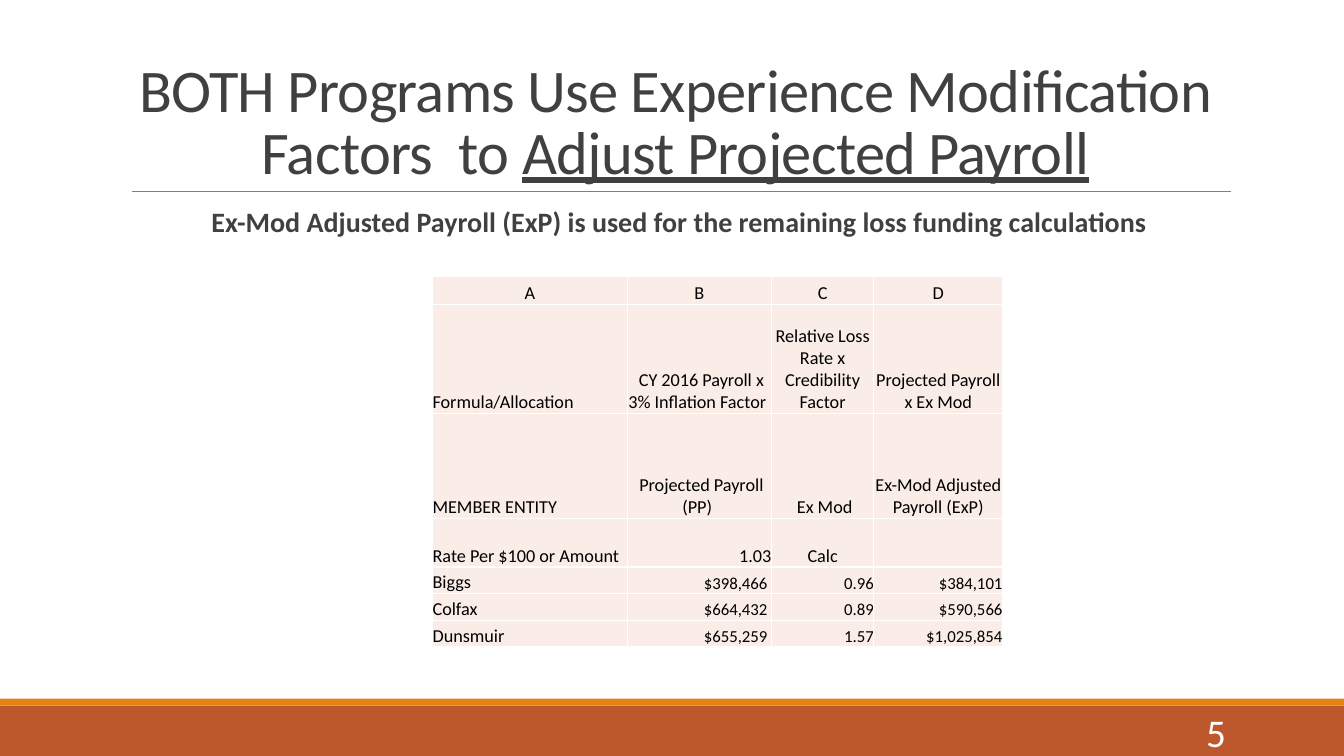
import dataclasses

import lxml.etree
import pptx
import pptx.dml.color
import pptx.enum.shapes
import pptx.enum.text
import pptx.oxml.ns
import pptx.util

Pt = pptx.util.Pt
Align = pptx.enum.text.PP_ALIGN
Anchor = pptx.enum.text.MSO_ANCHOR
qn = pptx.oxml.ns.qn


@dataclasses.dataclass(frozen=True)
class Theme:
    font: str = "Calibri"
    white: str = "FFFFFF"
    black: str = "000000"
    dark: str = "404040"
    gray: str = "808080"
    rust: str = "BD582C"
    orange: str = "E48312"
    blush: str = "FAEDE7"
    title: float = 43.2
    number: float = 28
    body: float = 20
    label: float = 13
    money: float = 12


def rgb(code):
    return pptx.dml.color.RGBColor.from_string(code)


def node(parent, tag, **attrs):
    return lxml.etree.SubElement(parent, qn(tag), **attrs)


class Page:
    def __init__(self, slide, theme):
        self.shapes = slide.shapes
        self.theme = theme

    def style(self, para, size, color, align, bold=False):
        para.alignment = align
        for run in para.runs:
            run.font.name = self.theme.font
            run.font.size = Pt(size)
            run.font.bold = bold
            run.font.color.rgb = rgb(color)

    def band(self, top, height, color):
        bar = self.shapes.add_shape(
            pptx.enum.shapes.MSO_SHAPE.RECTANGLE, 0, Pt(top), Pt(960), Pt(height))
        bar.shadow.inherit = False
        bar.fill.solid()
        bar.fill.fore_color.rgb = rgb(color)
        bar.line.fill.background()

    def rule(self, left, right, top):
        line = self.shapes.add_connector(
            pptx.enum.shapes.MSO_CONNECTOR.STRAIGHT, Pt(left), Pt(top), Pt(right), Pt(top))
        line.line.color.rgb = rgb(self.theme.gray)
        line.line.width = Pt(0.5)
        node(line._element.spPr, "a:effectLst")

    def text(self, box, words, size, color, align, anchor, bold=False):
        frame = self.shapes.add_textbox(*map(Pt, box)).text_frame
        frame.word_wrap = True
        frame.vertical_anchor = anchor
        frame.text = words
        self.style(frame.paragraphs[0], size, color, align, bold)
        return frame

    def title(self, box, plain, marked):
        look = self.theme
        frame = self.text(box, plain, look.title, look.dark, Align.CENTER, Anchor.BOTTOM)
        para = frame.paragraphs[0]
        para.line_spacing = 0.85
        run = para.add_run()
        run.text = marked
        self.style(para, look.title, look.dark, Align.CENTER)
        run.font.underline = True
        for part in para.runs:
            part.font._element.set("spc", "-50")

    def body(self, box, words):
        look = self.theme
        frame = self.text(box, words, look.body, look.dark, Align.CENTER, Anchor.TOP, True)
        frame.margin_left = frame.margin_right = 0
        para = frame.paragraphs[0]
        para.line_spacing = 0.9
        para.space_before = Pt(12)
        para.space_after = Pt(2)
        props = para._p.get_or_add_pPr()
        props.set("marL", str(Pt(7.2)))
        props.set("indent", str(Pt(-7.2)))
        node(node(props, "a:buClr"), "a:srgbClr", val=look.orange)
        node(props, "a:buChar", char=" ")

    def border(self, cell):
        props = cell._tc.get_or_add_tcPr()
        for side in ("a:lnL", "a:lnR", "a:lnT", "a:lnB"):
            edge = node(props, side, w=str(Pt(1)))
            node(node(edge, "a:solidFill"), "a:srgbClr", val=self.theme.white)

    def cell(self, cell, words, size, align):
        self.border(cell)
        cell.fill.solid()
        cell.fill.fore_color.rgb = rgb(self.theme.blush)
        cell.margin_left = cell.margin_right = cell.margin_top = cell.margin_bottom = 0
        cell.vertical_anchor = Anchor.BOTTOM
        cell.text_frame.text = words
        self.style(cell.text_frame.paragraphs[0], size, self.theme.black, align)

    def table(self, left, top, cols, rows, data, heads):
        grid = self.shapes.add_table(
            len(rows), len(cols), Pt(left), Pt(top), Pt(sum(cols)), Pt(sum(rows))).table
        for col, width in zip(grid.columns, cols):
            col.width = Pt(width)
        for row, height in zip(grid.rows, rows):
            row.height = Pt(height)
        for r, line in enumerate(data):
            for c, words in enumerate(line):
                value = r >= heads and c > 0
                size = self.theme.money if value else self.theme.label
                if value or words == "1.03":
                    align = Align.RIGHT
                elif c == 0 and r > 0:
                    align = Align.LEFT
                else:
                    align = Align.CENTER
                self.cell(grid.cell(r, c), words, size, align)


def main():
    deck = pptx.Presentation()
    deck.slide_width, deck.slide_height = Pt(960), Pt(540)
    look = Theme()
    page = Page(deck.slides.add_slide(deck.slide_layouts[6]), look)

    page.band(504, 36, look.rust)
    page.band(499, 5, look.orange)
    page.rule(94.3, 879, 136.8)
    page.title((86.4, 22.3, 792, 114.5),
               "BOTH Programs Use Experience Modification Factors  to ",
               "Adjust Projected Payroll")
    page.body((86.4, 145.4, 792, 316.8),
              "Ex-Mod Adjusted Payroll (ExP) is used for the remaining loss funding calculations ")
    page.text((779.8, 508.3, 103, 28.8), "5", look.number, look.white,
              Align.RIGHT, Anchor.MIDDLE)

    data = [
        ("A", " B ", " C ", " D "),
        ("Formula/Allocation", " CY 2016 Payroll x 3% Inflation Factor ",
         "Relative Loss Rate x Credibility Factor", "Projected Payroll x Ex Mod"),
        ("MEMBER ENTITY", " Projected Payroll (PP) ", " Ex Mod",
         "Ex-Mod Adjusted Payroll (ExP)"),
        ("Rate Per $100 or Amount", "1.03", "Calc", ""),
        ("Biggs", "$398,466 ", "0.96", "$384,101"),
        ("Colfax", "$664,432 ", "0.89", "$590,566"),
        ("Dunsmuir", "$655,259 ", "1.57", "$1,025,854"),
    ]
    page.table(309, 197.2, (139, 103, 73.2, 92),
               (20.5, 77.8, 75, 34.5) + (19.1,) * 3, data, heads=4)
    deck.save("out.pptx")


if __name__ == "__main__":
    main()
